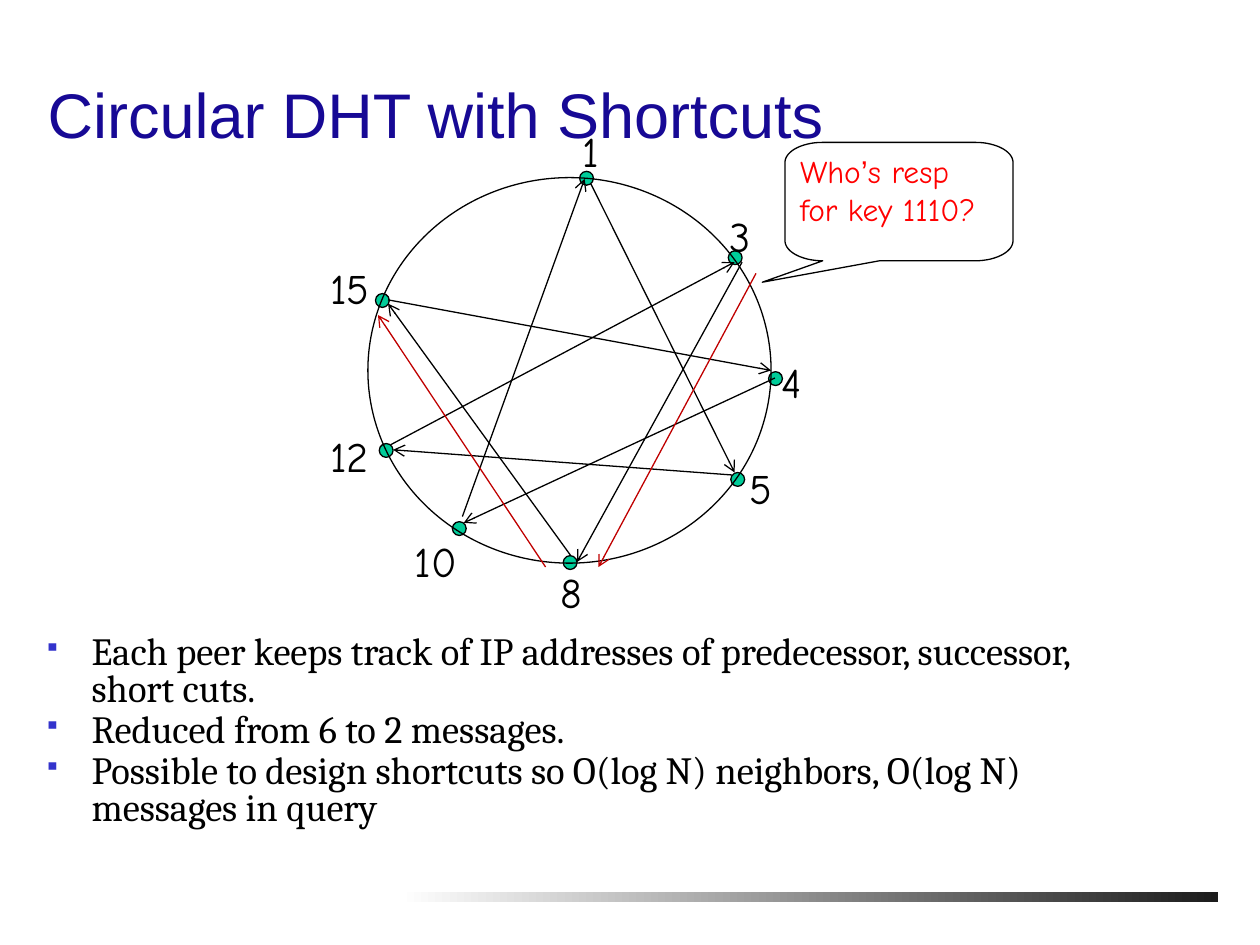
import math

from lxml import etree
from pptx import Presentation
from pptx.dml.color import RGBColor
from pptx.enum.shapes import MSO_CONNECTOR, MSO_SHAPE
from pptx.enum.text import MSO_ANCHOR, MSO_AUTO_SIZE
from pptx.oxml.ns import qn
from pptx.util import Inches, Pt

STRAIGHT = MSO_CONNECTOR.STRAIGHT
OVAL, RECTANGLE = MSO_SHAPE.OVAL, MSO_SHAPE.RECTANGLE
TOP, BOTTOM = MSO_ANCHOR.TOP, MSO_ANCHOR.BOTTOM
GROW, FIXED = MSO_AUTO_SIZE.SHAPE_TO_FIT_TEXT, MSO_AUTO_SIZE.NONE

BLACK, WHITE, RED, DARK_RED = "000000", "FFFFFF", "FF0000", "C00000"
TITLE_BLUE, BULLET_BLUE, PEER_GREEN = "170995", "3333CC", "00CC99"
TITLE_FONT, BODY_FONT, LABEL_FONT = "Arial", "Cambria", "Comic Neue"
LINE_WIDTH = Pt(0.75)
DOT = 0.11

# peer id: (dot left, dot top, label left, label top, label width)
PEERS = {
    "8": (4.47, 4.41, 4.41, 4.5, 0.37),
    "15": (2.98, 2.33, 2.58, 2.08, 0.52),
    "12": (3.01, 3.52, 2.58, 3.42, 0.52),
    "3": (5.78, 1.99, 5.75, 1.67, 0.37),
    "4": (6.1, 2.95, 6.16, 2.83, 0.37),
    "5": (5.8, 3.75, 5.91, 3.67, 0.37),
    "10": (3.59, 4.14, 3.25, 4.25, 0.52),
    "1": (4.6, 1.36, 4.58, 1, 0.32),
}
SHORTCUTS = [
    ((6.15, 3), (3.68, 4.15)),
    ((5.81, 3.77), (3.12, 3.57)),
    ((4.53, 4.41), (3.08, 2.41)),
    ((3.67, 4.1), (4.64, 1.42)),
    ((3.1, 3.53), (5.83, 2.08)),
    ((3.08, 2.38), (6.12, 2.94)),
    ((4.69, 1.46), (5.83, 3.75)),
    ((5.89, 2.08), (4.58, 4.46)),
]
QUERY_HOPS = [((6, 2.17), (4.75, 4.5)), ((4.33, 4.5), (3, 2.5))]
POINTS = [
    "Each peer keeps track of IP addresses of predecessor, successor, short cuts.",
    "Reduced from 6 to 2 messages.",
    "Possible to design shortcuts so O(log N) neighbors, O(log N) messages in query",
]


def color(hex_text):
    return RGBColor.from_string(hex_text)


def callout_outline(left, top, right, bottom, radius_x, radius_y, tail):
    """Points of a box with elliptical corners and a tail on its bottom edge."""
    corners = [
        (right - radius_x, top + radius_y, -90),
        (right - radius_x, bottom - radius_y, 0),
        (left + radius_x, bottom - radius_y, 90),
        (left + radius_x, top + radius_y, 180),
    ]
    points = []
    for index, (x, y, start) in enumerate(corners):
        if index == 2:
            points += tail
        for step in range(0, 91, 6):
            angle = math.radians(start + step)
            points.append((x + radius_x * math.cos(angle),
                           y + radius_y * math.sin(angle)))
    return points


class SlideBuilder:
    def __init__(self, page):
        self.page = page

    def outline(self, shape):
        shape.shadow.inherit = False
        shape.line.color.rgb = color(BLACK)
        shape.line.width = LINE_WIDTH

    def oval(self, left, top, width, height, fill=None):
        oval = self.page.shapes.add_shape(
            OVAL, Inches(left), Inches(top), Inches(width), Inches(height))
        self.outline(oval)
        if fill:
            oval.fill.solid()
            oval.fill.fore_color.rgb = color(fill)
        else:
            oval.fill.background()

    def gradient_bar(self, left, top, width, height, start, end):
        bar = self.page.shapes.add_shape(
            RECTANGLE, Inches(left), Inches(top), Inches(width), Inches(height))
        bar.shadow.inherit = False
        bar.line.fill.background()
        bar.fill.gradient()
        bar.fill.gradient_angle = 0
        for stop, shade in zip(bar.fill.gradient_stops, (start, end)):
            stop.color.rgb = color(shade)

    def arrow(self, start, end, shade=BLACK):
        line = self.page.shapes.add_connector(
            STRAIGHT, *(Inches(value) for value in start + end))
        line.line.color.rgb = color(shade)
        line.line.width = LINE_WIDTH
        head = etree.SubElement(line.line._get_or_add_ln(), qn("a:tailEnd"))
        head.set("type", "arrow")
        etree.SubElement(line._element.spPr, qn("a:effectLst"))

    def freeform(self, points):
        scaled = [(Inches(x), Inches(y)) for x, y in points]
        builder = self.page.shapes.build_freeform(*scaled[0])
        builder.add_line_segments(scaled[1:], close=True)
        shape = builder.convert_to_shape()
        self.outline(shape)
        shape.fill.background()

    def text(self, at, paragraphs, font, size, shade,
             margins=(0.04, 0, 0.04, 0), anchor=TOP, wrap=True):
        """Add a text box; each paragraph is a list of run texts."""
        box = self.page.shapes.add_textbox(*(Inches(value) for value in at))
        frame = box.text_frame
        frame.word_wrap = wrap
        frame.auto_size = FIXED if wrap else GROW
        frame.vertical_anchor = anchor
        (frame.margin_left, frame.margin_top,
         frame.margin_right, frame.margin_bottom) = map(Inches, margins)
        for index, spans in enumerate(paragraphs):
            para = frame.add_paragraph() if index else frame.paragraphs[0]
            for words in spans:
                span = para.add_run()
                span.text = words
                span.font.name = font
                span.font.size = Pt(size)
                span.font.color.rgb = color(shade)
        return frame

    def bullets(self, frame):
        for index, para in enumerate(frame.paragraphs):
            para.line_spacing = 0.8
            if index:
                para.space_before = Pt(2.2)
            props = para._p.get_or_add_pPr()
            props.set("marL", str(Inches(0.38)))
            props.set("indent", str(-Inches(0.38)))
            tint = etree.SubElement(props, qn("a:buClr"))
            etree.SubElement(tint, qn("a:srgbClr")).set("val", BULLET_BLUE)
            etree.SubElement(props, qn("a:buSzPct")).set("val", "60000")
            etree.SubElement(props, qn("a:buChar")).set("char", "▪")


def main():
    deck = Presentation()
    deck.slide_width, deck.slide_height = Inches(10), Inches(7.5)
    slide = SlideBuilder(deck.slides.add_slide(deck.slide_layouts[6]))

    slide.gradient_bar(3.17, 7.08, 6.5, 0.08, WHITE, "1C1C1C")
    margins = (0.1, 0.05, 0.14, 0.05)
    slide.text((0.28, 0, 9, 1.25), [["Circular DHT with Shortcuts"]],
               TITLE_FONT, 36, TITLE_BLUE, margins, BOTTOM)
    body = slide.text((0.25, 5, 9, 2.5), [[point] for point in POINTS],
                      BODY_FONT, 22, BLACK, margins)
    slide.bullets(body)

    for left, top, *_ in PEERS.values():
        slide.oval(left, top, DOT, DOT, PEER_GREEN)
    slide.oval(2.92, 1.41, 3.2, 3.06)
    for peer, (_, _, left, top, width) in PEERS.items():
        slide.text((left, top, width, 0.57), [[peer]],
                   LABEL_FONT, 24, BLACK, wrap=False)
    for start, end in SHORTCUTS:
        slide.arrow(start, end)
    for start, end in QUERY_HOPS:
        slide.arrow(start, end, DARK_RED)

    tail = [(6.98, 2.07), (6.05, 2.24)]
    slide.freeform(callout_outline(6.23, 1.13, 8.04, 2.07, 0.3, 0.16, tail))
    question = slide.text((6.31, 1.21, 1.82, 0.9),
                          [["Who", "’", "s resp"], ["for key 1110?"]],
                          LABEL_FONT, 18, RED)
    question.paragraphs[0].runs[1].font.name = TITLE_FONT

    deck.save("out.pptx")


if __name__ == "__main__":
    main()
